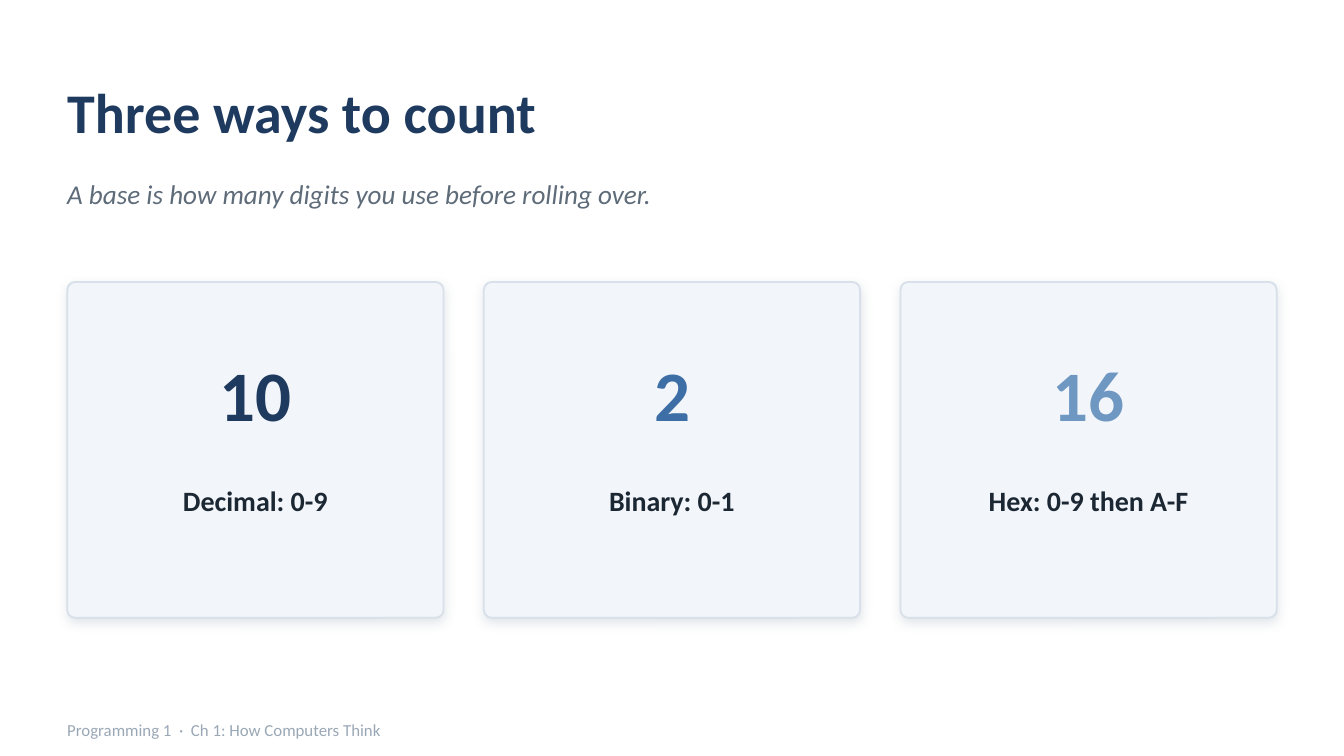
import dataclasses

import pptx
import pptx.dml.color
import pptx.enum.shapes
import pptx.enum.text
import pptx.oxml
import pptx.oxml.ns
import pptx.util

Cm = pptx.util.Cm
Pt = pptx.util.Pt
ALIGN = pptx.enum.text.PP_ALIGN
ANCHOR = pptx.enum.text.MSO_ANCHOR


@dataclasses.dataclass(frozen=True)
class Theme:
    font: str = "Calibri"
    background: str = "FFFFFF"
    navy: str = "1F3A5F"
    blue: str = "3D6EA5"
    sky: str = "6E97C2"
    ink: str = "1B2733"
    muted: str = "5E6B79"
    faint: str = "9AA8B6"
    card_fill: str = "F2F5F9"
    card_line: str = "D8E0E9"
    title_size: float = 30
    subtitle_size: float = 14.5
    number_size: float = 38
    label_size: float = 15
    footer_size: float = 9


def rgb(color):
    return pptx.dml.color.RGBColor.from_string(color)


class Deck:
    def __init__(self, prs, theme):
        self.theme = theme
        self.s = prs.slides.add_slide(prs.slide_layouts[5])
        fill = self.s.background.fill
        fill.solid()
        fill.fore_color.rgb = rgb(theme.background)

    def set_text(self, sp, text, size, color, bold=False, italic=False,
                 align=ALIGN.LEFT, anchor=ANCHOR.MIDDLE):
        tf = sp.text_frame
        tf.word_wrap = True
        tf.auto_size = pptx.enum.text.MSO_AUTO_SIZE.NONE
        tf.margin_left = tf.margin_right = tf.margin_top = tf.margin_bottom = 0
        tf.vertical_anchor = anchor
        p = tf.paragraphs[0]
        p.text = text
        p.alignment = align
        font = p.font
        font.name, font.size = self.theme.font, Pt(size)
        font.bold, font.italic = bold, italic
        font.color.rgb = rgb(color)

    def title(self, text, x, y, w, h):
        sp = self.s.shapes.title
        sp.left, sp.top, sp.width, sp.height = x, y, w, h
        self.set_text(sp, text, self.theme.title_size, self.theme.navy,
                      bold=True)

    def text(self, text, x, y, w, h, size, color, **style):
        sp = self.s.shapes.add_textbox(x, y, w, h)
        self.set_text(sp, text, size, color, **style)

    def panel(self, x, y, w, h):
        sp = self.s.shapes.add_shape(
            pptx.enum.shapes.MSO_SHAPE.ROUNDED_RECTANGLE, x, y, w, h)
        sp.adjustments[0] = 0.024
        sp.fill.solid()
        sp.fill.fore_color.rgb = rgb(self.theme.card_fill)
        sp.line.color.rgb = rgb(self.theme.card_line)
        sp.line.width = Pt(1)
        self.soft_shadow(sp)

    def soft_shadow(self, sp):
        """Drop a blurred, mostly transparent shadow straight down."""
        sp.shadow.inherit = False
        effects = sp._element.spPr.find(pptx.oxml.ns.qn("a:effectLst"))
        effects.append(pptx.oxml.parse_xml(
            f'<a:outerShdw {pptx.oxml.ns.nsdecls("a")} blurRad="{Pt(6)}" '
            f'dist="{Pt(2)}" dir="5400000" algn="bl" rotWithShape="0">'
            f'<a:srgbClr val="{self.theme.faint}"><a:alpha val="28000"/>'
            '</a:srgbClr></a:outerShdw>'))

    def card(self, number, label, color, x, y, w, h):
        """Draw a panel with a large number above its label."""
        t = self.theme
        number_inset, label_inset = Cm(0.25), Cm(0.38)
        self.panel(x, y, w, h)
        self.text(number, x + number_inset, y + Cm(0.89),
                  w - 2 * number_inset, Cm(2.41), t.number_size, color,
                  bold=True, align=ALIGN.CENTER)
        self.text(label, x + label_inset, y + Cm(3.81),
                  w - 2 * label_inset, Cm(2.03), t.label_size, t.ink,
                  bold=True, align=ALIGN.CENTER, anchor=ANCHOR.TOP)


def main():
    prs = pptx.Presentation()
    prs.slide_width, prs.slide_height = Cm(25.4), Cm(14.29)
    t = Theme()
    deck = Deck(prs, t)

    margin = Cm(1.27)
    content_w = prs.slide_width - 2 * margin
    deck.title("Three ways to count", margin, Cm(1.02), content_w, Cm(2.16))
    deck.text("A base is how many digits you use before rolling over.",
              margin, Cm(3.15), content_w, Cm(1.02),
              t.subtitle_size, t.muted, italic=True)

    cards = [
        ("10", "Decimal: 0-9", t.navy),
        ("2", "Binary: 0-1", t.blue),
        ("16", "Hex: 0-9 then A-F", t.sky),
    ]
    gap = Cm(0.76)
    card_w = (content_w - gap * (len(cards) - 1)) // len(cards)
    for i, (number, label, color) in enumerate(cards):
        deck.card(number, label, color, margin + i * (card_w + gap),
                  Cm(5.33), card_w, Cm(6.35))

    deck.text("Programming 1  ·  Ch 1: How Computers Think",
              margin, Cm(13.46), Cm(20.32), Cm(0.66), t.footer_size, t.faint)
    prs.save("out.pptx")


if __name__ == "__main__":
    main()
